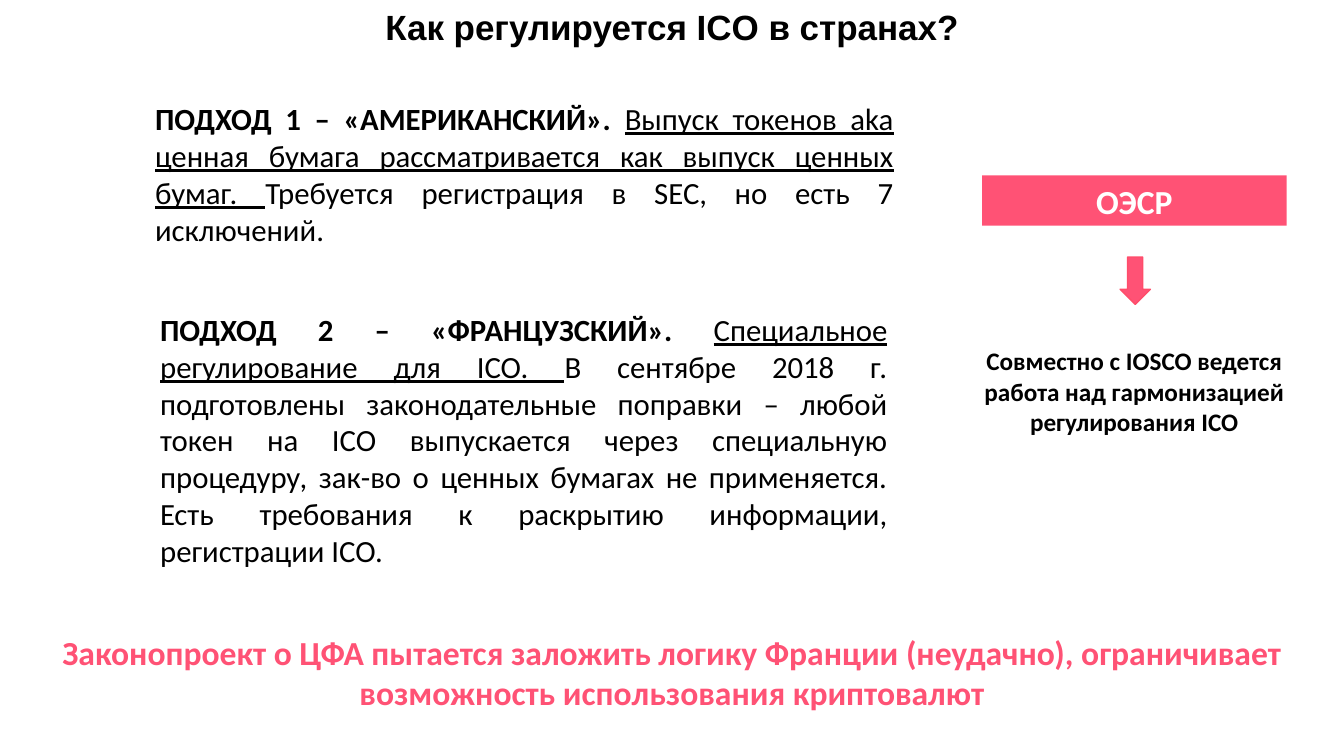
from dataclasses import dataclass

from pptx import Presentation
from pptx.dml.color import RGBColor
from pptx.enum.shapes import MSO_SHAPE
from pptx.enum.text import MSO_ANCHOR, MSO_AUTO_SIZE, PP_ALIGN
from pptx.util import Emu, Pt


@dataclass(frozen=True)
class Theme:
    black: RGBColor = RGBColor(0x00, 0x00, 0x00)
    white: RGBColor = RGBColor(0xFF, 0xFF, 0xFF)
    pink: RGBColor = RGBColor(0xFF, 0x52, 0x75)
    edge: RGBColor = RGBColor(0xFF, 0x4D, 0x6A)
    head: str = "Arial"
    body: str = "Calibri"
    title: int = 25
    large: int = 24
    main: int = 22
    small: int = 18


@dataclass(frozen=True)
class Box:
    left: int
    top: int
    width: int
    height: int


@dataclass(frozen=True)
class Style:
    size: int
    color: RGBColor
    face: str
    align: PP_ALIGN = PP_ALIGN.CENTER
    bold: bool | None = True
    anchor: MSO_ANCHOR = MSO_ANCHOR.TOP


@dataclass(frozen=True)
class Model:
    """One approach to regulation: bold name, underlined gist, plain detail."""
    box: Box
    name: str
    gist: str
    detail: str


THEME = Theme()
PX = 9144  # EMU per px, 100 px to the inch
WIDE, HIGH = 1333, 750

TITLE = Style(THEME.title, THEME.black, THEME.head)
MODEL = Style(THEME.main, THEME.black, THEME.body, PP_ALIGN.JUSTIFY, None)
BADGE = Style(THEME.large, THEME.white, THEME.body, anchor=MSO_ANCHOR.MIDDLE)
NOTE = Style(THEME.small, THEME.black, THEME.body)
CLOSE = Style(THEME.large, THEME.pink, THEME.body)

MODELS = [
    Model(Box(144, 94, 752, 158), "ПОДХОД 1 – «АМЕРИКАНСКИЙ». ",
          "Выпуск токенов aka ценная бумага рассматривается как выпуск ценных бумаг. ",
          "Требуется регистрация в SEC, но есть 7 исключений."),
    Model(Box(149, 303, 741, 306), "ПОДХОД 2 – «ФРАНЦУЗСКИЙ». ",
          "Специальное регулирование для ICO. ",
          "В сентябре 2018 г. подготовлены законодательные поправки – любой токен "
          "на ICO выпускается через специальную процедуру, зак-во о ценных бумагах "
          "не применяется. Есть требования к раскрытию информации, регистрации ICO."),
]


def place(box: Box) -> list[Emu]:
    return [Emu(n * PX) for n in (box.left, box.top, box.width, box.height)]


def write(shape, style: Style, text: str = ""):
    """Format the text frame and return its only paragraph."""
    frame = shape.text_frame
    frame.word_wrap = True
    frame.auto_size = MSO_AUTO_SIZE.NONE
    frame.vertical_anchor = style.anchor
    para = frame.paragraphs[0]
    para.text = text
    para.alignment = style.align
    font = para.font
    font.name, font.size, font.bold = style.face, Pt(style.size), style.bold
    font.color.rgb = style.color
    return para


def add_text(slide, box: Box, style: Style, text: str = ""):
    return write(slide.shapes.add_textbox(*place(box)), style, text)


def add_model(slide, model: Model) -> None:
    para = add_text(slide, model.box, MODEL)
    for part in (model.name, model.gist, model.detail):
        run = para.add_run()
        run.text = part
        run.font.bold = part == model.name
        run.font.underline = part == model.gist


def add_block(slide, kind: MSO_SHAPE, box: Box):
    block = slide.shapes.add_shape(kind, *place(box))
    block.shadow.inherit = False
    block.fill.solid()
    block.fill.fore_color.rgb = THEME.pink
    block.line.fill.background()
    return block


def main() -> None:
    deck = Presentation()
    deck.slide_width, deck.slide_height = Emu(WIDE * PX), Emu(HIGH * PX)
    slide = deck.slides.add_slide(deck.slide_layouts[5])

    # Title
    title = slide.shapes.title
    title.left, title.top, title.width, title.height = place(Box(0, 0, WIDE, 52))
    write(title, TITLE, "Как регулируется ICO в странах?")

    # Two approaches
    for model in MODELS:
        add_model(slide, model)

    # Side column: badge, arrow, note
    badge = add_block(slide, MSO_SHAPE.RECTANGLE, Box(974, 174, 302, 50))
    write(badge, BADGE, "ОЭСР")
    arrow = add_block(slide, MSO_SHAPE.DOWN_ARROW, Box(1111, 255, 30, 47))
    arrow.line.color.rgb = THEME.edge
    arrow.line.width = Pt(1)
    add_text(slide, Box(950, 338, 350, 101), NOTE,
             "Совместно с IOSCO ведется работа над гармонизацией регулирования ICO")

    # Conclusion
    add_text(slide, Box(33, 622, 1267, 91), CLOSE,
             "Законопроект о ЦФА пытается заложить логику Франции (неудачно), "
             "ограничивает возможность использования криптовалют")

    deck.save("out.pptx")


if __name__ == "__main__":
    main()
